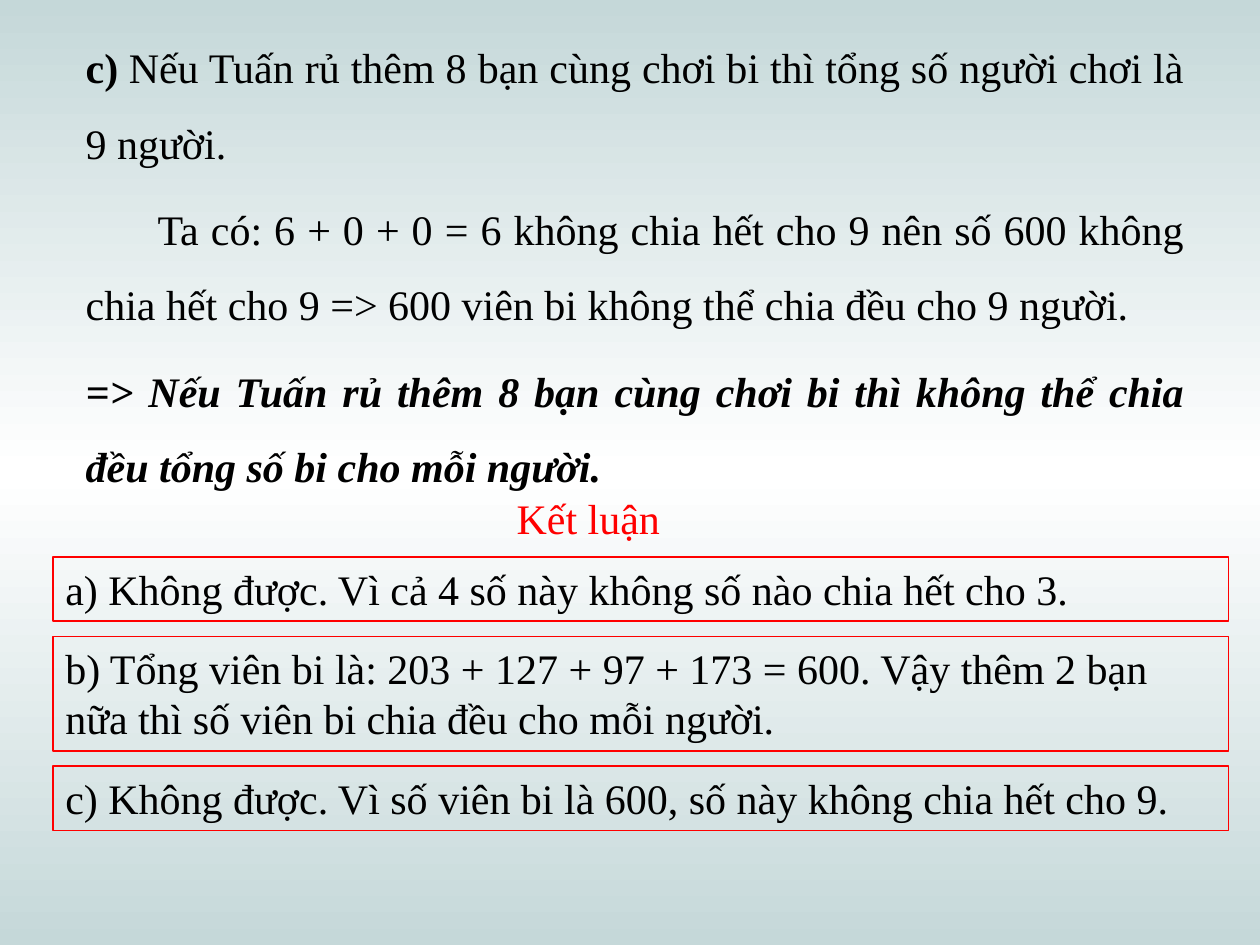
from copy import deepcopy
from dataclasses import dataclass

from pptx import Presentation
from pptx.dml.color import RGBColor
from pptx.enum.shapes import MSO_SHAPE
from pptx.enum.text import MSO_ANCHOR, MSO_AUTO_SIZE, PP_ALIGN
from pptx.oxml import parse_xml
from pptx.oxml.ns import nsdecls, qn
from pptx.util import Inches, Pt

RECT = MSO_SHAPE.RECTANGLE
TOP, FIXED = MSO_ANCHOR.TOP, MSO_AUTO_SIZE.NONE
LEFT, FULL = PP_ALIGN.LEFT, PP_ALIGN.JUSTIFY


@dataclass(frozen=True)
class Theme:
    font: str = "Times New Roman"
    size: Pt = Pt(24)
    line: Pt = Pt(0.75)
    ink: RGBColor = RGBColor(0, 0, 0)
    red: RGBColor = RGBColor(255, 0, 0)
    edge: RGBColor = RGBColor(0xC5, 0xD8, 0xD9)
    white: RGBColor = RGBColor(255, 255, 255)


THEME = Theme()

# Each paragraph: first-line indent in inches, then (text, bold, italic) runs
PROOF = [
    (0, [("c)\u00a0", True, False),
         ("Nếu Tuấn rủ thêm 8 bạn cùng chơi bi thì tổng số người chơi là 9 người.",
          False, False)]),
    (0.57, [("Ta có: 6 + 0 + 0 = 6 không chia hết cho 9 nên số 600 không chia hết "
             "cho 9 => 600 viên bi không thể chia đều cho 9 người.", False, False)]),
    (0, [("=> Nếu Tuấn rủ thêm 8 bạn cùng chơi bi thì không thể chia đều "
          "tổng số bi cho mỗi người.", True, True)]),
]
# Each answer: text, box height in inches
ANSWERS = [
    ("a) Không được. Vì cả 4 số này không số nào chia hết cho 3.", 0.51),
    ("b) Tổng viên bi là: 203 + 127 + 97 + 173 = 600. Vậy thêm 2 bạn nữa "
     "thì số viên bi chia đều cho mỗi người.", 0.91),
    ("c) Không được. Vì số viên bi là 600, số này không chia hết cho 9.", 0.51),
]


def style(run, color, bold=False, italic=False):
    font = run.font
    font.name, font.size = THEME.font, THEME.size
    font.color.rgb = color
    font.bold, font.italic = bold, italic


def place(shape, left, top, width, height):
    """Set the box of a shape and make its text wrap from the top."""
    shape.left, shape.top = Inches(left), Inches(top)
    shape.width, shape.height = Inches(width), Inches(height)
    frame = shape.text_frame
    frame.word_wrap, frame.auto_size = True, FIXED
    frame.vertical_anchor = TOP
    return frame


def paint_back(slide):
    fill = slide.background.fill
    fill.gradient()
    fill.gradient_angle = 90
    stops = slide.element.find(".//" + qn("a:gsLst"))
    stops.append(deepcopy(stops[-1]))
    colors = (THEME.edge, THEME.white, THEME.edge)
    for stop, pos, color in zip(fill.gradient_stops, (0, 0.5, 1), colors):
        stop.position = pos
        stop.color.rgb = color


def add_proof(slide, left, top, width, height):
    frame = place(slide.placeholders[1], left, top, width, height)
    for i, (indent, parts) in enumerate(PROOF):
        para = frame.add_paragraph() if i else frame.paragraphs[0]
        para.alignment = FULL
        para.line_spacing, para.space_before = 1.5, Pt(6)
        props = para._p.get_or_add_pPr()
        props.set("marL", "0")
        props.set("indent", str(Inches(indent)))
        props.append(parse_xml(f"<a:buNone {nsdecls('a')}/>"))
        for text, bold, italic in parts:
            run = para.add_run()
            run.text = text
            style(run, THEME.ink, bold, italic)


def add_head(slide, left, top, width, height):
    frame = place(slide.shapes.title, left, top, width, height)
    frame.text = "Kết luận"
    para = frame.paragraphs[0]
    para.alignment = LEFT
    style(para.runs[0], THEME.red)


def add_answers(slide, left, top, width, gap):
    """Stack the outlined answers downwards with equal gaps."""
    for text, height in ANSWERS:
        box = slide.shapes.add_shape(RECT, 0, 0, 0, 0)
        frame = place(box, left, top, width, height)
        box.shadow.inherit = False
        box.fill.background()
        box.line.color.rgb, box.line.width = THEME.red, THEME.line
        frame.text = text
        para = frame.paragraphs[0]
        para.alignment = LEFT
        style(para.runs[0], THEME.ink)
        top += height + gap


def main():
    deck = Presentation()
    deck.slide_width, deck.slide_height = Inches(10), Inches(7.5)
    slide = deck.slides.add_slide(deck.slide_layouts[1])
    paint_back(slide)
    add_proof(slide, 0.58, 0.08, 8.92, 3.9)
    add_head(slide, 4, 3.86, 3, 0.5)
    add_answers(slide, 0.42, 4.42, 9.33, 0.12)
    deck.save("out.pptx")


if __name__ == "__main__":
    main()
